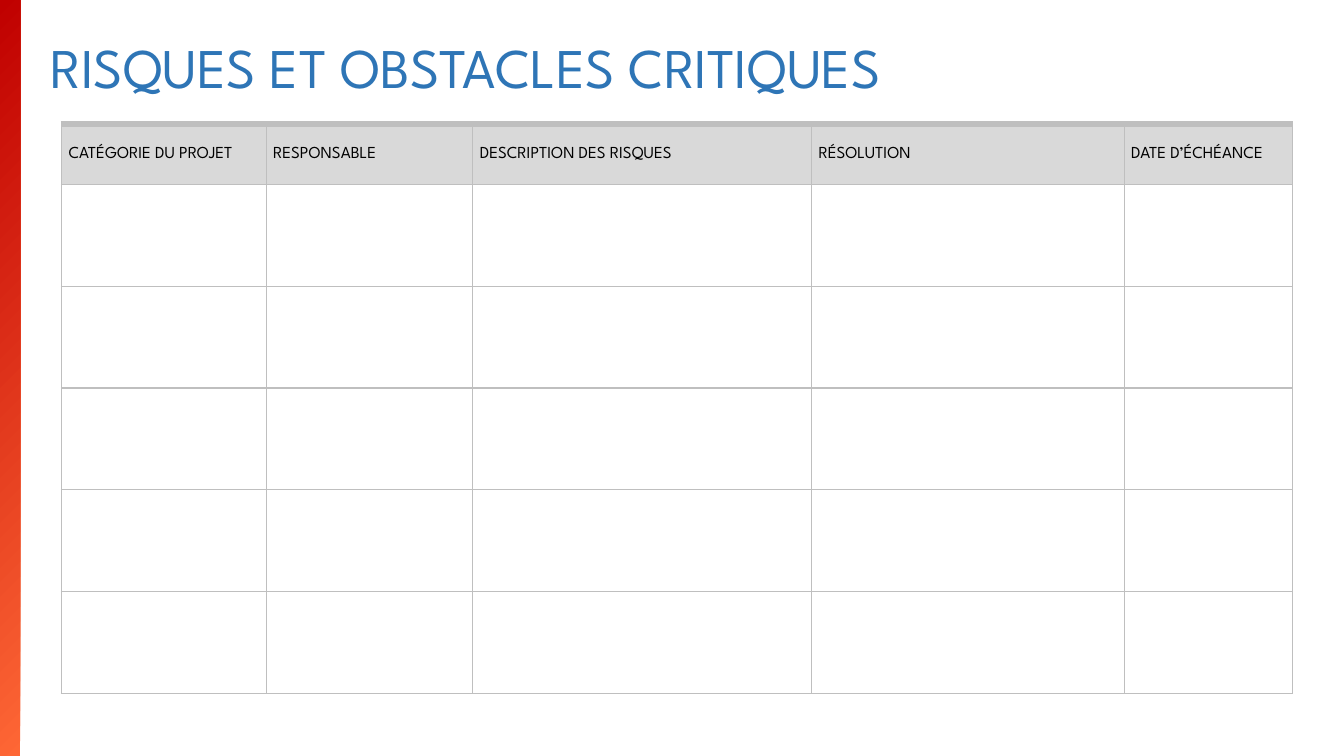
from dataclasses import dataclass

from lxml import etree
from pptx import Presentation
from pptx.dml.color import RGBColor
from pptx.enum.shapes import MSO_SHAPE
from pptx.enum.text import MSO_ANCHOR, MSO_AUTO_SIZE
from pptx.oxml.ns import qn
from pptx.util import Inches, Pt

RECTANGLE = MSO_SHAPE.RECTANGLE
MIDDLE = MSO_ANCHOR.MIDDLE
FIT_SHAPE = MSO_AUTO_SIZE.SHAPE_TO_FIT_TEXT

FONT = "League Spartan"
BLUE = RGBColor(0x2E, 0x75, 0xB6)
BLACK = RGBColor(0x00, 0x00, 0x00)
WHITE = RGBColor(0xFF, 0xFF, 0xFF)
HEADER_GRAY = RGBColor(0xD9, 0xD9, 0xD9)
BORDER_GRAY = RGBColor(0xBF, 0xBF, 0xBF)
ORANGE = RGBColor(0xFE, 0x67, 0x35)
DARK_RED = RGBColor(0xC0, 0x00, 0x00)

HEADER_HEIGHT = 0.6
RISK_HEIGHT = 1.01
RISK_COUNT = 5
THIN = 1
THICK = 4.5


@dataclass(frozen=True)
class Column:
    heading: str
    width: float


COLUMNS = [
    Column("CATÉGORIE DU PROJET", 2.03),
    Column("RESPONSABLE", 2.05),
    Column("DESCRIPTION DES RISQUES", 3.36),
    Column("RÉSOLUTION", 3.1),
    Column("DATE D’ÉCHÉANCE", 1.67),
]


def add_run(paragraph, text: str, size: float, color: RGBColor) -> None:
    run = paragraph.add_run()
    run.text = text
    run.font.name = FONT
    run.font.size = Pt(size)
    run.font.color.rgb = color


def style_cell(cell, fill: RGBColor, top_width: float) -> None:
    # Borders come before the fill in the cell properties
    properties = cell._tc.get_or_add_tcPr()
    widths = {"a:lnL": THIN, "a:lnR": THIN, "a:lnT": top_width, "a:lnB": THIN}
    for side, width in widths.items():
        line = etree.SubElement(properties, qn(side), w=str(Pt(width)))
        solid = etree.SubElement(line, qn("a:solidFill"))
        etree.SubElement(solid, qn("a:srgbClr"), val=str(BORDER_GRAY))
    cell.fill.solid()
    cell.fill.fore_color.rgb = fill
    cell.vertical_anchor = MIDDLE
    cell.margin_left = cell.margin_right = Inches(0.07)
    cell.margin_top = cell.margin_bottom = 0


def add_risk_table(slide) -> None:
    width = sum(column.width for column in COLUMNS)
    height = HEADER_HEIGHT + RISK_COUNT * RISK_HEIGHT
    risks = slide.shapes.add_table(
        RISK_COUNT + 1, len(COLUMNS),
        Inches(0.61), Inches(1.23), Inches(width), Inches(height),
    ).table
    risks.first_row = False
    risks.horz_banding = False
    for index, row in enumerate(risks.rows):
        is_header = index == 0
        row.height = Inches(HEADER_HEIGHT if is_header else RISK_HEIGHT)
        for cell in row.cells:
            style_cell(cell, HEADER_GRAY if is_header else WHITE,
                       THICK if is_header else THIN)
    for index, column in enumerate(COLUMNS):
        risks.columns[index].width = Inches(column.width)
        heading = risks.cell(0, index).text_frame.paragraphs[0]
        add_run(heading, column.heading, 12, BLACK)


def add_title(slide) -> None:
    title = slide.shapes.add_textbox(
        Inches(0.4), Inches(0.27), Inches(9.49), Inches(0.77)).text_frame
    title.word_wrap = False
    title.auto_size = FIT_SHAPE
    add_run(title.paragraphs[0], "RISQUES ET OBSTACLES CRITIQUES", 40, BLUE)


def add_side_band(slide) -> None:
    band = slide.shapes.add_shape(RECTANGLE, 0, 0, Inches(0.2), Inches(7.5))
    band.shadow.inherit = False
    band.line.fill.background()
    band.fill.gradient()
    band.fill.gradient_angle = 135
    for stop, color in zip(band.fill.gradient_stops, (ORANGE, DARK_RED)):
        stop.color.rgb = color


def main() -> None:
    deck = Presentation()
    deck.slide_width = Inches(13.33)
    deck.slide_height = Inches(7.5)
    slide = deck.slides.add_slide(deck.slide_layouts[6])
    add_risk_table(slide)
    add_title(slide)
    add_side_band(slide)
    deck.save("out.pptx")


if __name__ == "__main__":
    main()
